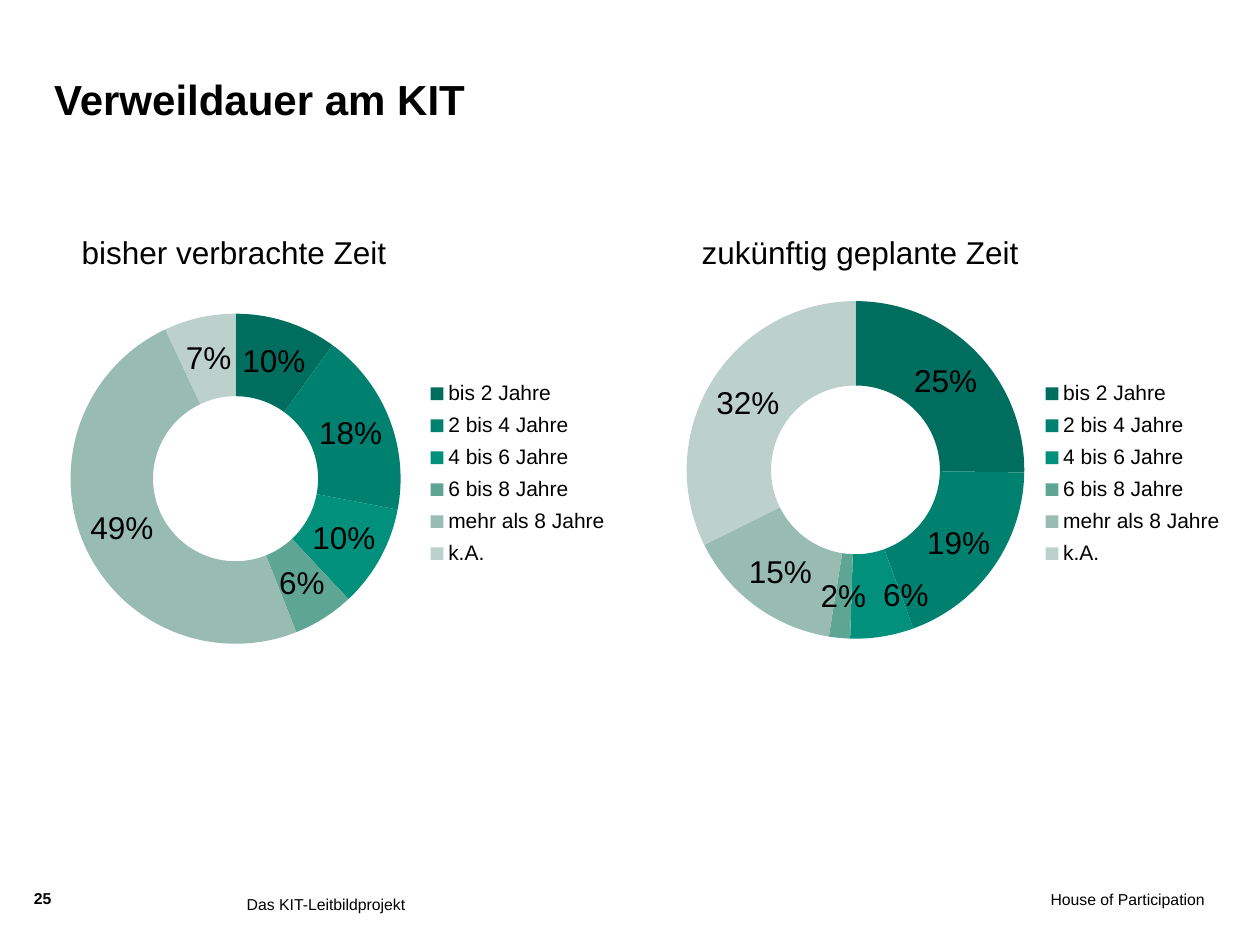
from lxml import etree
from pptx import Presentation
from pptx.chart.data import CategoryChartData as ChartData
from pptx.dml.color import RGBColor as Rgb
from pptx.enum.chart import XL_CHART_TYPE as Kind, XL_LEGEND_POSITION as Side
from pptx.enum.text import MSO_ANCHOR as Anchor, PP_ALIGN as Align
from pptx.oxml import parse_xml
from pptx.oxml.ns import nsdecls, qn
from pptx.util import Inches, Pt

HUES = {
    "bis 2 Jahre": "006E5F",
    "2 bis 4 Jahre": "00806F",
    "4 bis 6 Jahre": "00907C",
    "6 bis 8 Jahre": "5FA594",
    "mehr als 8 Jahre": "98BCB2",
    "k.A.": "BCD1CC",
}
INK = Rgb.from_string("000000")
TOP, HIGH = 2.25, 3


def write(text, at, size, bold=False, pad=True, wrap=True, align=Align.LEFT, anchor=Anchor.TOP):
    frame = slide.shapes.add_textbox(*map(Inches, at)).text_frame
    frame.word_wrap = wrap
    frame.vertical_anchor = anchor
    if not pad:
        for edge in ("left", "right", "top", "bottom"):
            setattr(frame, "margin_" + edge, 0)
    para = frame.paragraphs[0]
    para.alignment = align
    run = para.add_run()
    run.text = text
    for key, value in {"name": "Arial", "size": Pt(size), "bold": bold}.items():
        setattr(run.font, key, value)
    run.font.color.rgb = INK


def place(node, index, spot, inner=False, mode="edge"):
    for old in node.findall(qn("c:layout")):
        node.remove(old)
    layout = parse_xml(f"<c:layout {nsdecls('c')}><c:manualLayout/></c:layout>")
    pairs = {"layoutTarget": "inner"} if inner else {}
    pairs.update(xMode=mode, yMode=mode)
    pairs.update(zip("xywh", spot))
    for key, value in pairs.items():
        etree.SubElement(layout[0], qn("c:" + key)).set("val", str(value))
    node.insert(index, layout)


deck = Presentation()
deck.slide_width, deck.slide_height = Inches(10), Inches(7.5)
slide = deck.slides.add_slide(deck.slide_layouts[6])

write("House of Participation", (6.57, 7.06, 2.99, 0.39), 9, pad=False, align=Align.RIGHT)
write("25", (0.27, 7.05, 0.36, 0.24), 9, bold=True, pad=False)
write("Das KIT-Leitbildprojekt", (1.86, 7.05, 4.65, 0.39), 9)
write("Verweildauer am KIT", (0.43, 0.37, 7.56, 0.61), 24, bold=True, pad=False, anchor=Anchor.BOTTOM)

rings = [
    (5.16, 4.84, (25, 19, 6, 2, 15, 32), (6.79, 3.73, 1.34), 8.24, {2: (0.05, 0)}),
    (0, 5.31, (10, 18, 10, 6, 49, 7), (1.87, 3.8, 1.31), 3.36, {}),
]
for left, wide, vals, (mid_x, mid_y, rad), key_x, moves in rings:
    data = ChartData()
    data.categories = list(HUES)
    data.add_series("Series 1", vals)
    box = map(Inches, (left, TOP, wide, HIGH))
    chart = slide.shapes.add_chart(Kind.DOUGHNUT, *box, data).chart
    chart.has_title = False
    chart.has_legend = True
    chart.font.name = "Arial"
    chart.font.size = Pt(18)
    chart.font.color.rgb = INK

    legend = chart.legend
    legend.position = Side.RIGHT
    legend.include_in_layout = False
    legend.font.size = Pt(12)
    place(legend._element, 1, ((key_x - left) / wide, (2.96 - TOP) / HIGH, 1.5 / wide, 1.6 / HIGH))
    spot = ((mid_x - rad - left) / wide, (mid_y - rad - TOP) / HIGH, 2 * rad / wide, 2 * rad / HIGH)
    place(chart._chartSpace.chart.plotArea, 0, spot, inner=True)

    plot = chart.plots[0]
    plot.vary_by_categories = True
    row = plot.series[0]
    form = {
        "show_percentage": True,
        "show_value": False,
        "show_legend_key": False,
        "number_format": "0%",
        "number_format_is_linked": False,
    }
    for key, value in form.items():
        setattr(row.data_labels, key, value)
    for slot, hue in enumerate(HUES.values()):
        part = row.points[slot].format
        part.fill.solid()
        part.fill.fore_color.rgb = Rgb.from_string(hue)
        part.line.fill.background()

    for slot, move in moves.items():
        font = row.points[slot].data_label.font
        font.name, font.size = "Arial", Pt(18)
        font.color.rgb = INK
        label = row.data_labels._element.find(qn("c:dLbl"))
        label.find(qn("c:showVal")).set("val", "0")
        label.find(qn("c:showPercent")).set("val", "1")
        place(label, 1, move, mode="factor")
        label.insert(2, parse_xml(f'<c:numFmt {nsdecls("c")} formatCode="0%" sourceLinked="0"/>'))

write("bisher verbrachte Zeit", (0.55, 1.8, 2.64, 0.4), 18, wrap=False)
write("zukünftig geplante Zeit", (5.47, 1.8, 2.74, 0.4), 18, wrap=False)

deck.save("out.pptx")
